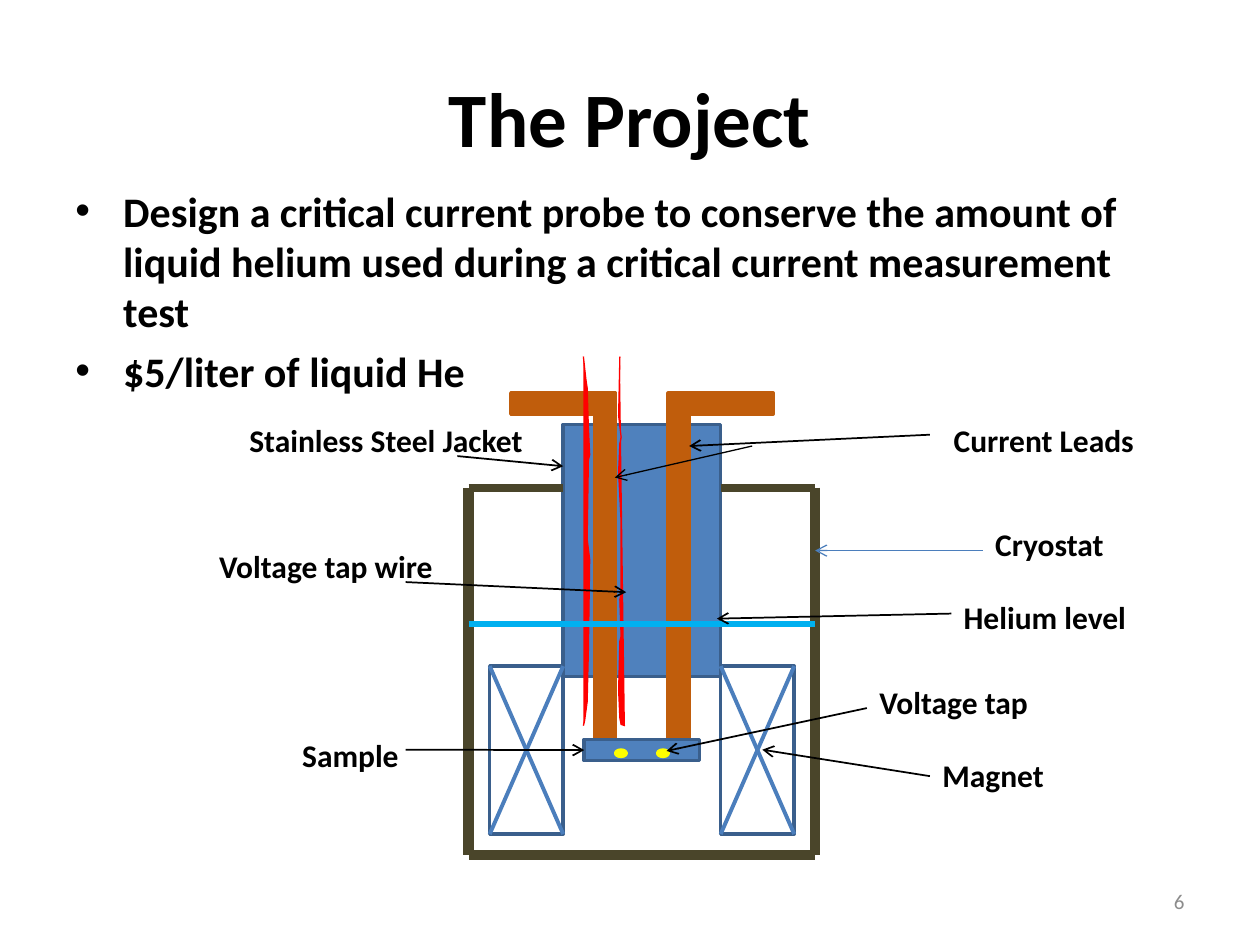
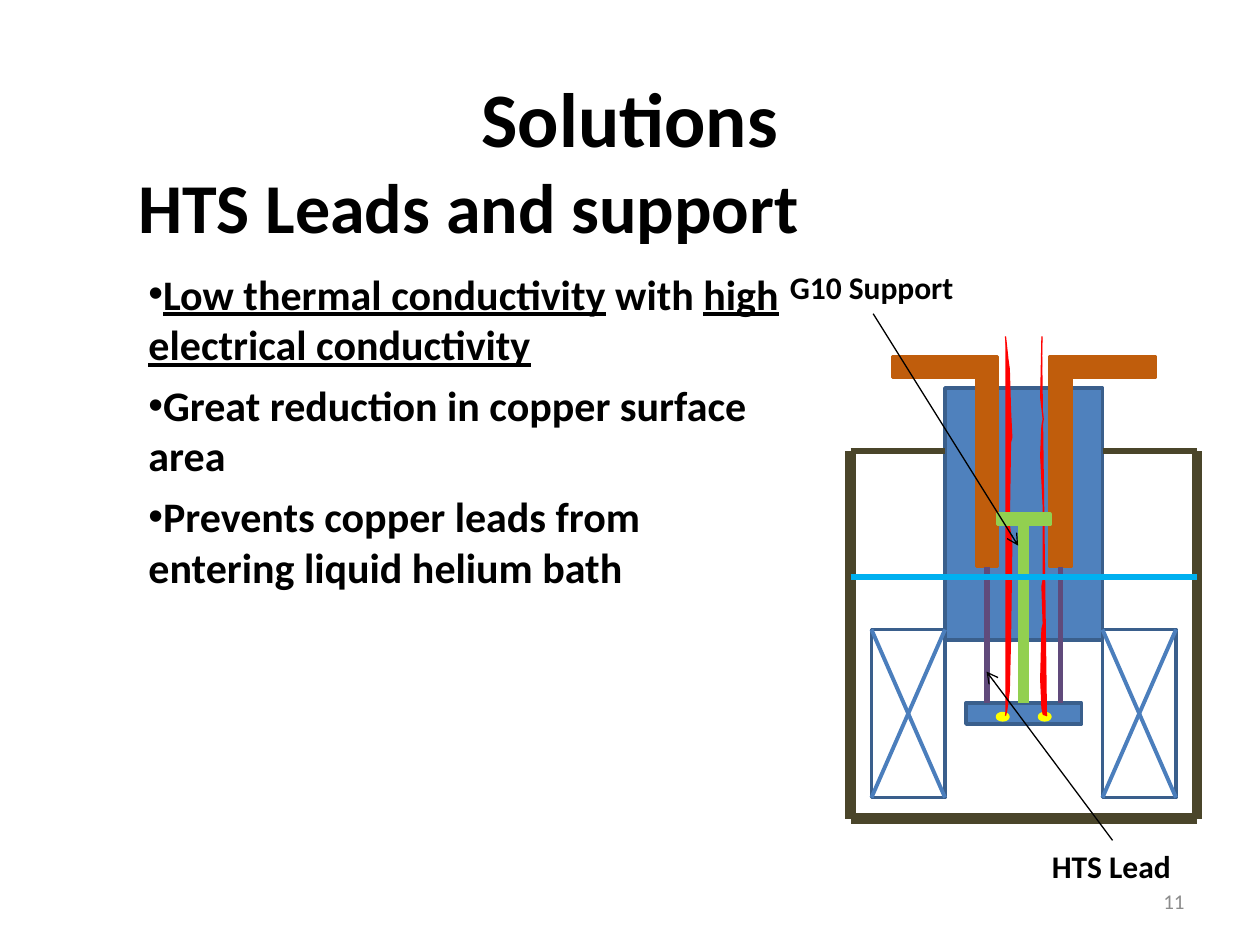
import pptx
import pptx.util
import pptx.dml.color
import pptx.enum.shapes
import pptx.enum.text
import pptx.oxml.ns
from lxml import etree

RGB = pptx.dml.color.RGBColor
BLACK = RGB(0, 0, 0)
GREY = RGB(0x8C, 0x8C, 0x8C)
WHITE = RGB(0xFF, 0xFF, 0xFF)
BLUE = RGB(0x4F, 0x81, 0xBD)
BLUE_EDGE = RGB(0x3A, 0x5F, 0x8C)
BLUE_LINE = RGB(0x4B, 0x7E, 0xBC)
COPPER = RGB(0xC0, 0x5D, 0x0C)
YELLOW = RGB(0xFF, 0xFF, 0)
RED = RGB(0xFF, 0, 0)
WALL = RGB(0x4A, 0x45, 0x2A)
HELIUM = RGB(0, 0xB0, 0xF0)
HTS = RGB(0x60, 0x4A, 0x7B)
GREEN = RGB(0x92, 0xD0, 0x50)

SHAPE = pptx.enum.shapes.MSO_SHAPE
ALIGN = pptx.enum.text.PP_ALIGN
MIDDLE = pptx.enum.text.MSO_ANCHOR.MIDDLE
Inches, Pt, qn = pptx.util.Inches, pptx.util.Pt, pptx.oxml.ns.qn
FONT = "Calibri"
UNIT = 1 / 12

# fmt: off
TAP_WIRES = [
    [(0, 293), (1, 289), (3, 274), (4, 233), (5, 161), (3, 145), (4, 82),
     (5, 78), (4, 57), (3, 25), (2, 18), (0, 0)],
    [(33, 293), (30, 292), (29, 287), (28, 265), (29, 226), (30, 222), (29, 193),
     (30, 188), (30, 131), (28, 92), (29, 69), (30, 64), (28, 47), (29, 0)],
]
# fmt: on

PROJECT = {
    "title": "The Project",
    "number": "6",
    "texts": [
        {"at": (0.5, 1.42, 9, 1.85), "size": 24, "before": 5, "indent": 0.38, "bullet": True,
         "paragraphs": [
             [("Design a critical current probe to conserve the amount of liquid helium "
               "used during a critical current measurement test", False)],
             [("$5/liter of liquid He", False)]]},
    ],
    "probe": {"origin": (4.47, 3.37), "lead": 31, "helium": 19, "lid": 4.5,
              "wires": (4.63, 2.83, 2.93), "hts": False},
    "labels": [
        ("Current Leads", (7.47, 3.29, 1.68)),
        ("Helium level", (7.55, 4.7, 1.5)),
        ("Cryostat", (7.8, 4.12, 1.1)),
        ("Voltage tap", (6.88, 5.37, 1.39)),
        ("Magnet", (7.38, 5.95, 1.01)),
        ("Sample", (2.3, 5.79, 0.97)),
        ("Voltage tap wire", (1.64, 4.29, 1.91)),
        ("Stainless Steel Jacket", (1.88, 3.29, 2.39)),
    ],
    "arrows": [
        ((7.38, 3.45), (5.47, 3.54), BLACK, 1),
        ((5.97, 3.54), (4.88, 3.79), BLACK, 0.75),
        ((7.55, 4.87), (5.69, 4.91), BLACK, 1),
        ((7.8, 4.37), (6.47, 4.37), BLUE_LINE, 0.75),
        ((6.88, 5.62), (5.29, 5.96), BLACK, 1),
        ((7.38, 6.16), (6.05, 5.95), BLACK, 1),
        ((3.22, 5.95), "sample", BLACK, 1),
        ((3.22, 4.62), (4.97, 4.7), BLACK, 1),
        ((3.63, 3.62), (4.47, 3.7), BLACK, 1),
    ],
}

SOLUTIONS = {
    "title": "Solutions",
    "number": "11",
    "texts": [
        {"at": (1, 1.25, 9, 0.8), "size": 40, "before": 8, "indent": 0, "bullet": False,
         "paragraphs": [[("HTS Leads and support", False)]]},
        {"at": (1.08, 2.08, 5.25, 3.3), "size": 24, "before": 6, "indent": 0, "bullet": True,
         "paragraphs": [
             [("Low thermal conductivity", True), (" with ", False),
              ("high electrical conductivity", True)],
             [("Great reduction in copper surface area", False)],
             [("Prevents copper leads from entering liquid helium bath", False)]]},
    ],
    "probe": {"origin": (7.5, 3.08), "lead": 18, "helium": 18, "lid": 3,
              "wires": (7.98, 2.67, 3.01), "hts": True},
    "labels": [
        ("G10 Support", (6.17, 2.08, 1.53)),
        ("HTS Lead", (8.25, 6.67, 1.15)),
    ],
    "arrows": [
        ((8.83, 6.67), (7.83, 5.33), BLACK, 0.75),
        ((6.93, 2.49), (8.08, 4.33), BLACK, 0.75),
    ],
}


def style_runs(p, runs, size, color=BLACK, bold=True):
    for text, underlined in runs:
        r = p.add_run()
        r.text = text
        look = {"name": FONT, "size": Pt(size), "bold": bold, "underline": underlined or None}
        for key, value in look.items():
            setattr(r.font, key, value)
        r.font.color.rgb = color


def add_text(s, at, paragraphs, size, color=BLACK, bold=True, wrap=True,
             before=0, indent=0, bullet=False, align=None, anchor=None):
    tf = s.shapes.add_textbox(*map(Inches, at)).text_frame
    tf.word_wrap = wrap
    tf.vertical_anchor = anchor
    for i, runs in enumerate(paragraphs):
        p = tf.paragraphs[0] if i == 0 else tf.add_paragraph()
        p.alignment, p.space_before = align, Pt(before)
        style_runs(p, runs, size, color, bold)
        if bullet:
            pPr = p._p.get_or_add_pPr()
            pPr.set("marL", str(Inches(indent)))
            pPr.set("indent", str(-Inches(indent)))
            etree.SubElement(pPr, qn("a:buFont")).set("typeface", "Arial")
            etree.SubElement(pPr, qn("a:buChar")).set("char", "•")


def paint(sp, fill, edge, width=2):
    sp.shadow.inherit = False
    sp.fill.solid()
    sp.fill.fore_color.rgb = fill
    sp.line.color.rgb = edge
    sp.line.width = Pt(width)
    return sp


def add_line(s, start, end, color, width, arrow=False):
    c = s.shapes.add_connector(pptx.enum.shapes.MSO_CONNECTOR.STRAIGHT,
                               *map(Inches, (*start, *end)))
    c.line.color.rgb = color
    c.line.width = Pt(width)
    spPr = c._element.spPr
    if arrow:
        etree.SubElement(spPr.find(qn("a:ln")), qn("a:tailEnd")).set("type", "arrow")
    etree.SubElement(spPr, qn("a:effectLst"))
    return c


def add_wires(s, left, top, height):
    for points in TAP_WIRES:
        xy = [(Inches(left + x / 100), Inches(top + y / 293 * height)) for x, y in points]
        builder = s.shapes.build_freeform(*xy[0])
        builder.add_line_segments(xy[1:], close=False)
        paint(builder.convert_to_shape(), RED, RED, 0.75)


def add_probe(s, origin, lead, helium, lid, wires, hts):
    def spot(x, y):
        return origin[0] + x * UNIT, origin[1] + y * UNIT

    def block(x, y, w, h, fill, edge, kind=SHAPE.RECTANGLE):
        box = (*spot(x, y), w * UNIT, h * UNIT)
        return paint(s.shapes.add_shape(kind, *map(Inches, box)), fill, edge)

    def rule(x1, y1, x2, y2, color, width):
        return add_line(s, spot(x1, y1), spot(x2, y2), color, width)

    block(0, 0, 15, 24, BLUE, BLUE_EDGE)
    leads = [block(x, -1, 2, lead, COPPER, COPPER) for x in (3, 10)]
    for x in (-5, 10):
        block(x, -3, 10, 2, COPPER, COPPER)
    sample = block(2, 30, 11, 2, BLUE, BLUE_EDGE)
    for x in (5, 9):
        block(x, 31, 1, 0.6, YELLOW, YELLOW, SHAPE.OVAL)
    add_wires(s, *wires)
    for x in (-9, 24):
        rule(x, 6, x, 41, WALL, 6)
    rule(-9, 41, 24, 41, WALL, 6)
    for x in (-7, 15):
        block(x, 23, 7, 16, WHITE, BLUE_EDGE)
        rule(x, 23, x + 7, 39, BLUE_LINE, 2.25)
        rule(x, 39, x + 7, 23, BLUE_LINE, 2.25)
    if hts:
        for x, sp in zip((4, 11), leads):
            rule(x, lead - 1, x, 30, HTS, 3).begin_connect(sp, 2)
        support = block(5, 12, 5, 1, GREEN, GREEN)
        rule(7.5, 13, 7.5, 30, GREEN, 6).begin_connect(support, 2)
    for x in (-9, 15):
        rule(x, 6, x + 9, 6, WALL, lid)
    rule(-9, helium, 24, helium, HELIUM, 3)
    return sample


def add_slide(prs, content):
    s = prs.slides.add_slide(prs.slide_layouts[5])
    title = s.shapes.title
    box = {"left": 0.5, "top": 0.3, "width": 9, "height": 1.25}
    for key, value in box.items():
        setattr(title, key, Inches(value))
    tf = title.text_frame
    tf.vertical_anchor = MIDDLE
    tf.paragraphs[0].alignment = ALIGN.CENTER
    style_runs(tf.paragraphs[0], [(content["title"], False)], 44)
    for text in content["texts"]:
        add_text(s, **text)
    add_text(s, (7.17, 6.95, 2.33, 0.4), [[(content["number"], False)]], 12, GREY,
             bold=False, align=ALIGN.RIGHT, anchor=MIDDLE)
    sample = add_probe(s, **content["probe"])
    for start, end, color, width in content["arrows"]:
        if end == "sample":
            add_line(s, start, start, color, width, arrow=True).end_connect(sample, 1)
        else:
            add_line(s, start, end, color, width, arrow=True)
    for text, at in content["labels"]:
        add_text(s, (*at, 0.4), [[(text, False)]], 18, wrap=False)


def main():
    prs = pptx.Presentation()
    prs.slide_width, prs.slide_height = Inches(10), Inches(7.5)
    for content in (PROJECT, SOLUTIONS):
        add_slide(prs, content)
    prs.save("out.pptx")


if __name__ == "__main__":
    main()
